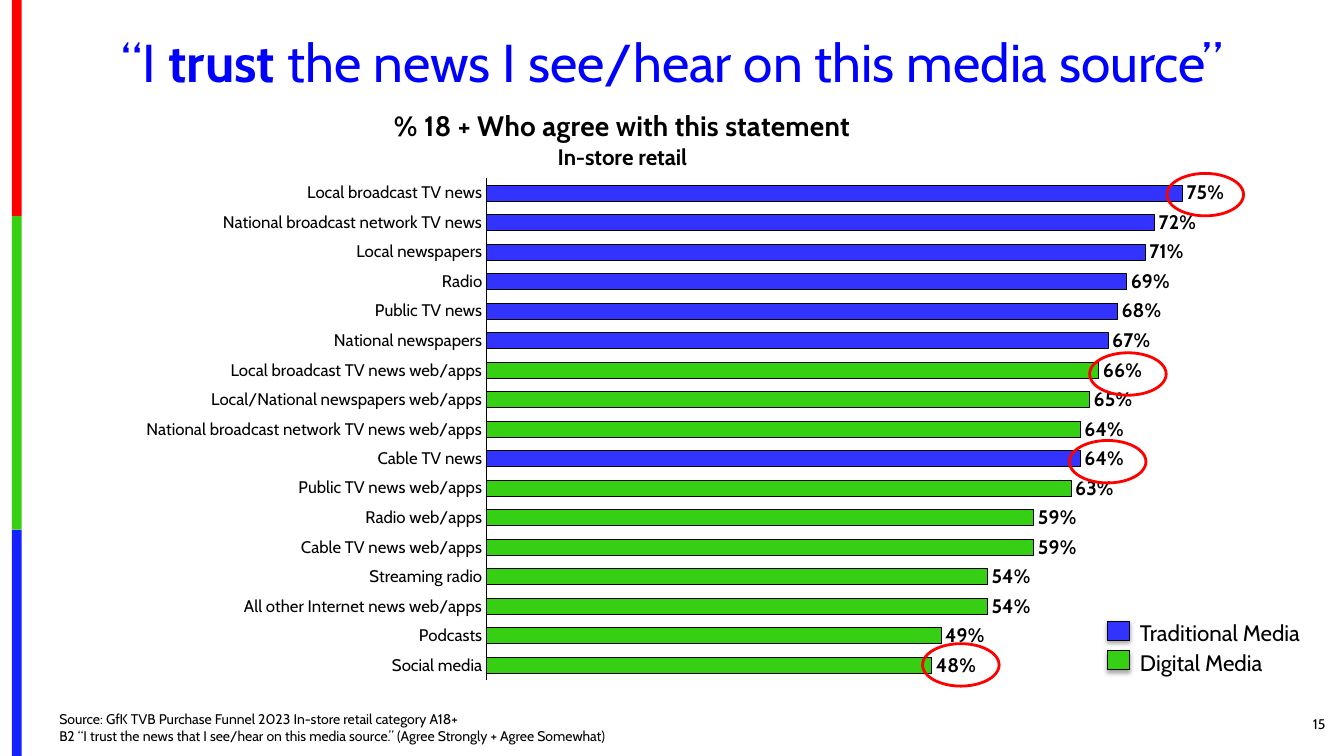
from lxml import etree
from pptx import Presentation
from pptx import util as u
from pptx.chart.data import CategoryChartData
from pptx.dml.color import RGBColor
from pptx.enum import chart as ch, shapes, text
from pptx.oxml import parse_xml
from pptx.oxml.ns import nsdecls, qn

Cm, Pt = u.Cm, u.Pt
FONT = "Cabin"
COLORS = {
    "title": "0000FF", "text": "000000", "outline": "000000", "circle": "FF0000",
    "traditional": "3333FF", "digital": "36CF13",
    "band_red": "FE0000", "band_green": "36CF12", "band_blue": "1322FE",
}
RATINGS = [
    ("Local broadcast TV news", 0.75, "traditional"),
    ("National broadcast network TV news", 0.72, "traditional"),
    ("Local newspapers", 0.71, "traditional"),
    ("Radio", 0.69, "traditional"),
    ("Public TV news", 0.68, "traditional"),
    ("National newspapers", 0.67, "traditional"),
    ("Local broadcast TV news web/apps", 0.66, "digital"),
    ("Local/National newspapers web/apps", 0.65, "digital"),
    ("National broadcast network TV news web/apps", 0.64, "digital"),
    ("Cable TV news", 0.64, "traditional"),
    ("Public TV news web/apps", 0.63, "digital"),
    ("Radio web/apps", 0.59, "digital"),
    ("Cable TV news web/apps", 0.59, "digital"),
    ("Streaming radio", 0.54, "digital"),
    ("All other Internet news web/apps", 0.54, "digital"),
    ("Podcasts", 0.49, "digital"),
    ("Social media", 0.48, "digital"),
]


def rgb(name):
    return RGBColor.from_string(COLORS[name])


def set_font(font, size, color="text", bold=False):
    font.name, font.size, font.bold = FONT, Pt(size), bold
    font.color.rgb = rgb(color)


def add_text(p, content, size, color="text", bold=False, align=None):
    """Append a run; a newline in the content becomes a line break."""
    p.alignment = align
    for i, line in enumerate(content.split("\n")):
        if i:
            p.add_line_break()
        r = p.add_run()
        r.text = line
        set_font(r.font, size, color, bold)


def place(sp, left, top, width, height):
    sp.left, sp.top, sp.width, sp.height = Cm(left), Cm(top), Cm(width), Cm(height)


def add_box(s, kind, left, top, width, height, fill=None, line=None, weight=0.75):
    sp = s.shapes.add_shape(kind, Cm(left), Cm(top), Cm(width), Cm(height))
    sp.shadow.inherit = False
    if fill:
        sp.fill.solid()
        sp.fill.fore_color.rgb = rgb(fill)
    else:
        sp.fill.background()
    if line:
        sp.line.color.rgb = rgb(line)
        sp.line.width = Pt(weight)
    else:
        sp.line.fill.background()
    return sp


def add_label(s, content, left, top, width, height, size, wrap=True, align=None):
    sp = s.shapes.add_textbox(Cm(left), Cm(top), Cm(width), Cm(height))
    tf = sp.text_frame
    tf.word_wrap = wrap
    tf.vertical_anchor = text.MSO_ANCHOR.MIDDLE
    add_text(tf.paragraphs[0], content, size, align=align)


def add_side_band(s, left, top, width):
    for color, height in (("band_red", 5.45), ("band_green", 7.9), ("band_blue", 5.7)):
        add_box(s, shapes.MSO_SHAPE.RECTANGLE, left, top, width, height, color)
        top += height


def add_title(s, *box):
    sp = s.shapes.title
    place(sp, *box)
    tf = sp.text_frame
    tf.vertical_anchor = text.MSO_ANCHOR.MIDDLE
    p = tf.paragraphs[0]
    p.line_spacing = 0.9
    for content, bold in (("“I ", False), ("trust", True),
                          (" the news I see/hear on this media source”", False)):
        add_text(p, content, 38, "title", bold, text.PP_ALIGN.CENTER)


def add_source(s, *box):
    sp = s.placeholders[1]
    place(sp, *box)
    tf = sp.text_frame
    tf.vertical_anchor = text.MSO_ANCHOR.TOP
    p = tf.paragraphs[0]
    pPr = p._p.get_or_add_pPr()
    pPr.set("marL", "0")
    pPr.set("indent", "0")
    etree.SubElement(pPr, qn("a:buNone"))
    p.space_before = Pt(0)
    add_text(p, "Source: GfK TVB Purchase Funnel 2023 In-store retail category A18+\n"
             "B2 “I trust the news that I see/hear on this media source.” "
             "(Agree Strongly + Agree Somewhat)", 10)


def set_layout(element, x, y, w=None, h=None):
    """Fix a chart part at fractions of the chart's size."""
    tags = [("xMode", "edge"), ("yMode", "edge"), ("x", x), ("y", y)]
    if w:
        tags = [("layoutTarget", "inner")] + tags + [("w", w), ("h", h)]
    inner = "".join(f'<c:{tag} val="{val}"/>' for tag, val in tags)
    for old in element.findall(qn("c:layout")):
        element.remove(old)
    layout = parse_xml(f'<c:layout {nsdecls("c")}><c:manualLayout>{inner}'
                       '</c:manualLayout></c:layout>')
    tx = element.find(qn("c:tx"))
    if tx is None:
        element.insert(0, layout)
    else:
        tx.addnext(layout)


def paint_bar(fmt, color):
    fmt.fill.solid()
    fmt.fill.fore_color.rgb = rgb(color)
    fmt.line.color.rgb = rgb("outline")
    fmt.line.width = Pt(0.75)


def add_trust_chart(s, left, top, width, height):
    data = CategoryChartData(number_format="0%")
    data.categories = [name for name, _, _ in RATINGS]
    data.add_series("Series 1", [share for _, share, _ in RATINGS])
    chart = s.shapes.add_chart(ch.XL_CHART_TYPE.BAR_CLUSTERED, Cm(left), Cm(top),
                               Cm(width), Cm(height), data).chart
    set_font(chart.font, 10)
    chart.has_legend = False

    chart.has_title = True
    tf = chart.chart_title.text_frame
    add_text(tf.paragraphs[0], "% 18 + Who agree with this statement", 20, bold=True)
    add_text(tf.add_paragraph(), "In-store retail", 16, bold=True)
    chart.chart_title.include_in_layout = False
    set_layout(chart.chart_title._element, 0.26, 0.01)
    set_layout(chart._chartSpace.chart.plotArea, 0.336, 0.137, 0.592, 0.863)

    sources = chart.category_axis
    sources.reverse_order = True
    sources.major_tick_mark = ch.XL_TICK_MARK.NONE
    sources.format.line.color.rgb = rgb("outline")
    sources.format.line.width = Pt(0.75)
    set_font(sources.tick_labels.font, 12)
    shares = chart.value_axis
    shares.minimum_scale, shares.maximum_scale = 0, 0.8
    shares.has_major_gridlines = False
    shares.visible = False

    plot = chart.plots[0]
    plot.gap_width = 83
    plot.vary_by_categories = False
    series = plot.series[0]
    series.invert_if_negative = False
    paint_bar(series.format, "traditional")
    for i, (_, _, kind) in enumerate(RATINGS):
        if kind == "digital":
            paint_bar(series.points[i].format, kind)
    labels = series.data_labels
    labels.show_value = True
    labels.number_format, labels.number_format_is_linked = "0%", False
    labels.position = ch.XL_LABEL_POSITION.OUTSIDE_END
    set_font(labels.font, 14, bold=True)


def add_legend(s, left, top, row_step):
    for i, (name, color) in enumerate((("Traditional Media", "traditional"),
                                       ("Digital Media", "digital"))):
        y = top + i * row_step
        key = add_box(s, shapes.MSO_SHAPE.RECTANGLE, left, y + 0.18, 0.56, 0.48,
                      color, "outline")
        key._element.spPr.find(qn("a:effectLst")).append(parse_xml(
            f'<a:outerShdw {nsdecls("a")} blurRad="{Pt(3.1)}" dist="{Pt(1.8)}" '
            'dir="5400000" rotWithShape="0"><a:srgbClr val="000000">'
            '<a:alpha val="35000"/></a:srgbClr></a:outerShdw>'))
        add_label(s, name, left + 0.57, y, 4.7, 0.94, 16, wrap=False)


def add_circles(s, width, height):
    for left, top in ((29.41, 4.37), (27.46, 8.89), (26.95, 11.1), (23.25, 16.22)):
        add_box(s, shapes.MSO_SHAPE.OVAL, left, top, width, height, None, "circle", 2)


def main():
    prs = Presentation()
    prs.slide_width, prs.slide_height = Cm(33.87), Cm(19.05)
    s = prs.slides.add_slide(prs.slide_layouts[1])
    add_side_band(s, 0.3, 0, 0.25)
    add_title(s, 1.17, 0.79, 31.55, 1.73)
    add_trust_chart(s, 1.63, 2.49, 31.62, 14.66)
    add_label(s, "15", 30.91, 17.73, 2.74, 1.02, 10, align=text.PP_ALIGN.RIGHT)
    add_source(s, 1.24, 17.78, 24, 1.12)
    add_legend(s, 27.91, 15.47, 0.75)
    add_circles(s, 1.93, 1.07)
    prs.save("out.pptx")


if __name__ == "__main__":
    main()
